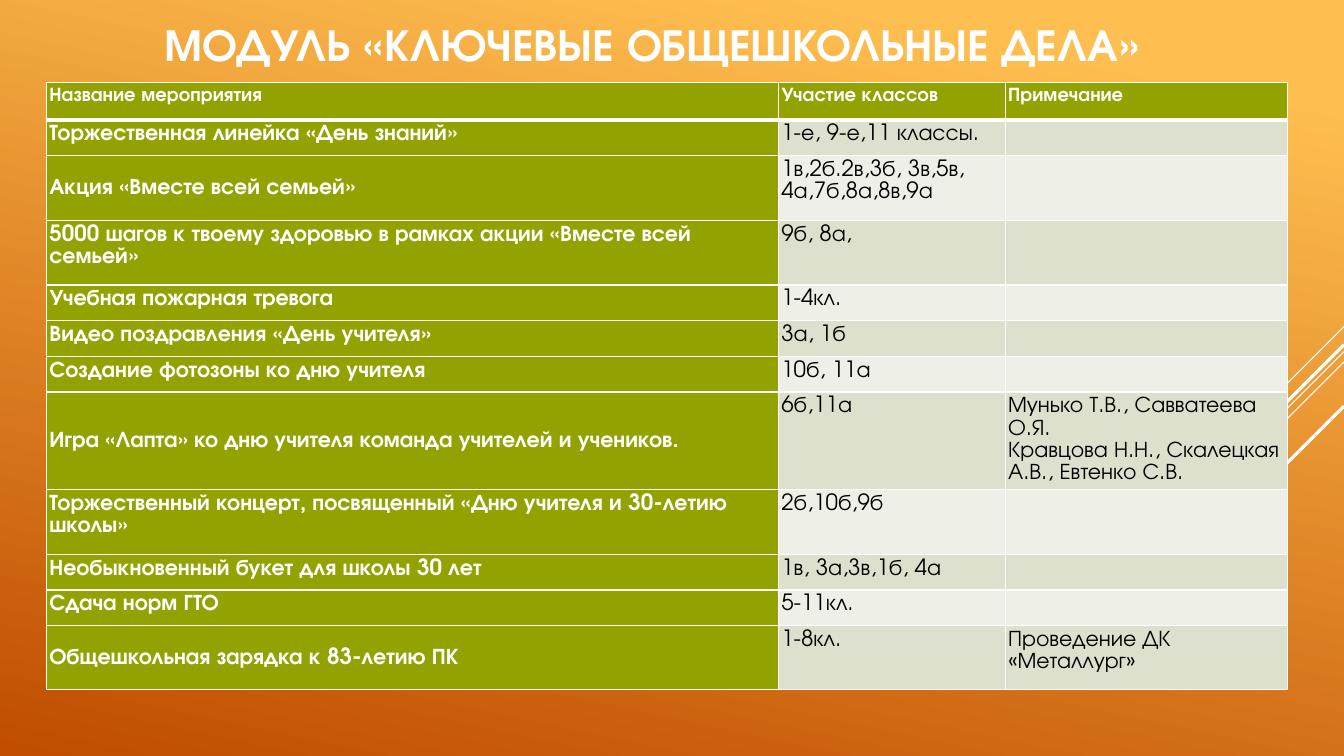
from lxml import etree
from pptx import Presentation
from pptx import util as u
from pptx.dml.color import RGBColor
from pptx.enum import shapes, text
from pptx.oxml.ns import qn

WHITE = RGBColor(0xFF, 0xFF, 0xFF)
BLACK = RGBColor(0, 0, 0)
GREEN = RGBColor(0x92, 0xA2, 0x00)
DARK = RGBColor(0xDC, 0xE0, 0xCC)
PALE = RGBColor(0xEE, 0xF0, 0xE7)
AMBER = RGBColor(0xFF, 0xBF, 0x50)
RUST = RGBColor(0xC0, 0x4D, 0x00)
FONT = "TeX Gyre Adventor"
TOP, MID = text.MSO_ANCHOR.TOP, text.MSO_ANCHOR.MIDDLE

# The grid has 100 columns and 100 rows.
COL = u.Inches(13.33) / 100
ROW = u.Inches(7.5) / 100

WIDTHS = (54.46, 16.88, 21)
HEAD = ("Название мероприятия", "Участие классов", "Примечание")
ONE, TWO, FOUR = 4.72, 8.56, 12.93
EVENTS = (
    # height, anchor of the name, name, classes, note
    (ONE, TOP, "Торжественная линейка «День знаний»", "1-е, 9-е,11 классы.", ""),
    (TWO, MID, "Акция «Вместе всей семьей»", "1в,2б.2в,3б, 3в,5в, 4а,7б,8а,8в,9а", ""),
    (TWO, TOP, "5000 шагов к твоему здоровью в рамках акции «Вместе всей семьей»",
     "9б, 8а,", ""),
    (ONE, TOP, "Учебная пожарная тревога", "1-4кл.", ""),
    (ONE, TOP, "Видео поздравления «День учителя»", "3а, 1б", ""),
    (ONE, TOP, "Создание фотозоны ко дню учителя", "10б, 11а", ""),
    (FOUR, MID, "Игра «Лапта» ко дню учителя команда учителей и учеников.", "6б,11а",
     "Мунько Т.В., Савватеева О.Я.\nКравцова Н.Н., Скалецкая А.В., Евтенко С.В."),
    (TWO, TOP, "Торжественный концерт, посвященный «Дню учителя и 30-летию школы»",
     "2б,10б,9б", ""),
    (ONE, TOP, "Необыкновенный букет для школы 30 лет", "1в, 3а,3в,1б, 4а", ""),
    (ONE, TOP, "Сдача норм ГТО", "5-11кл.", ""),
    (8.4, MID, "Общешкольная зарядка к 83-летию ПК", "1-8кл.",
     "Проведение ДК «Металлург»"),
)
RAYS = (  # start row, drop in rows, points
    (43.2, 13.33, 0.75),
    (46.53, 43.47, 0.75),
    (47.87, 27.6, 0.75),
    (45.6, 25.47, 2.25),
    (53.73, 18.53, 2.25),
)


def across(n):
    return round(n * COL)


def down(n):
    return round(n * ROW)


def write(frame, words, size=16, color=BLACK, bold=False, align=None, space=None):
    frame.text = words
    for para in frame.paragraphs:
        para.alignment = align
        para.line_spacing = space
        for run in para.runs:
            font = run.font
            font.name, font.size, font.bold = FONT, u.Pt(size), bold
            font.color.rgb = color
        if not para.runs:
            etree.SubElement(para._p, qn("a:endParaRPr"), sz=str(size * 100))


def paint(slide):
    fill = slide.background.fill
    fill.gradient()
    fill.gradient_angle = 258
    for stop, (place, color) in zip(fill.gradient_stops, ((0.1, AMBER), (1, RUST))):
        stop.position = place
        stop.color.rgb = color


def add_ray(slide, start, drop, width):
    """Draw a 45 degree line inward from the right edge."""
    edge = across(100)
    ray = slide.shapes.add_connector(
        shapes.MSO_CONNECTOR.STRAIGHT, edge, down(start),
        edge - down(drop), down(start + drop))
    ray.line.color.rgb = WHITE
    ray.line.width = u.Pt(width)
    etree.SubElement(ray._element.spPr, qn("a:effectLst"))


def set_title(slide, words):
    title = slide.shapes.title
    title.left, title.top = across(6), down(-2)
    title.width, title.height = across(85), down(22)
    frame = title.text_frame
    frame.word_wrap = True
    frame.auto_size = text.MSO_AUTO_SIZE.NONE
    frame.vertical_anchor = MID
    frame.margin_bottom = u.Inches(0.54)
    write(frame, words, size=32.4, color=WHITE, bold=True, align=text.PP_ALIGN.CENTER)


def set_cell(cell, words, fill, anchor=TOP, edges=(1, 1, 1, 1), **fmt):
    """Fill a cell; edges are points for left, right, top and bottom."""
    cell.margin_left = cell.margin_right = u.Inches(0.03)
    cell.margin_top = cell.margin_bottom = u.Inches(0.03)
    cell.vertical_anchor = anchor
    write(cell.text_frame, words, space=1.07, **fmt)
    props = cell._tc.get_or_add_tcPr()
    for side, width in zip("LRTB", edges):
        line = etree.SubElement(props, qn(f"a:ln{side}"), w=str(u.Pt(width)))
        solid = etree.SubElement(line, qn("a:solidFill"))
        etree.SubElement(solid, qn("a:srgbClr"), val=str(WHITE))
    cell.fill.solid()
    cell.fill.fore_color.rgb = fill


def add_events(slide):
    heights = [4.93] + [event[0] for event in EVENTS]
    table = slide.shapes.add_table(
        len(heights), len(WIDTHS), across(3.45), down(10.93),
        across(sum(WIDTHS)), down(sum(heights))).table
    for col, width in zip(table.columns, WIDTHS):
        col.width = across(width)
    for row, height in zip(table.rows, heights):
        row.height = down(height)
    for c, words in enumerate(HEAD):
        set_cell(table.cell(0, c), words, GREEN, edges=(1, 1, 1, 3),
                 size=14, color=WHITE, bold=True)
    for r, (_, anchor, name, *rest) in enumerate(EVENTS, 1):
        edges = (1, 1, 3 if r == 1 else 1, 1)
        set_cell(table.cell(r, 0), name, GREEN, anchor, edges, color=WHITE, bold=True)
        for c, words in enumerate(rest, 1):
            set_cell(table.cell(r, c), words, DARK if r % 2 else PALE, edges=edges)


def main():
    deck = Presentation()
    deck.slide_width, deck.slide_height = across(100), down(100)
    slide = deck.slides.add_slide(deck.slide_layouts.get_by_name("Title Only"))
    paint(slide)
    for ray in RAYS:
        add_ray(slide, *ray)
    set_title(slide, "МОДУЛЬ «КЛЮЧЕВЫЕ ОБЩЕШКОЛЬНЫЕ ДЕЛА»")
    add_events(slide)
    deck.save("out.pptx")


if __name__ == "__main__":
    main()
